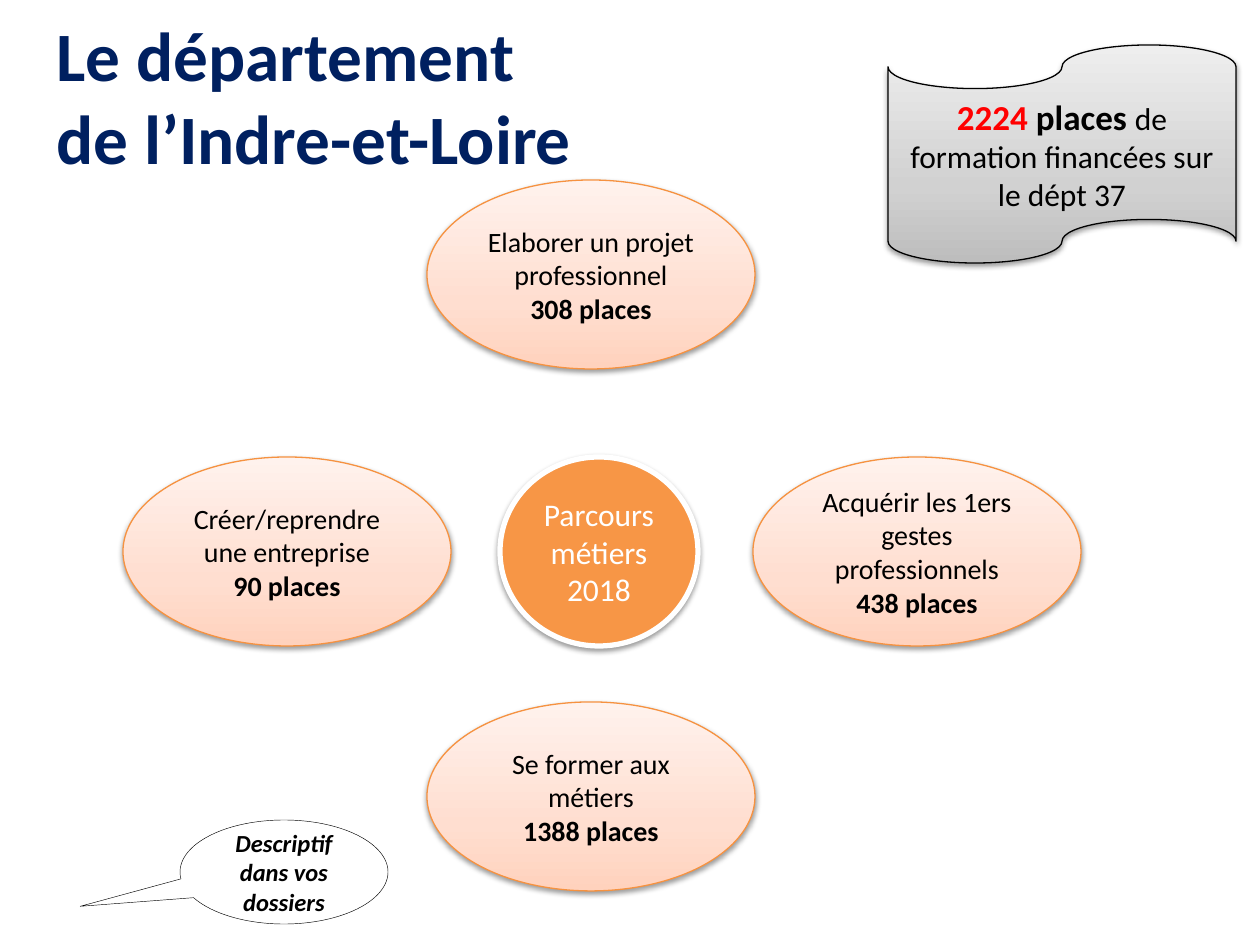
"""Build the slide on training places in the Indre-et-Loire department."""
from pptx import Presentation
from pptx.dml.color import RGBColor
from pptx.enum.shapes import MSO_SHAPE
from pptx.enum.text import MSO_ANCHOR, PP_ALIGN
from pptx.oxml import parse_xml
from pptx.oxml.ns import nsdecls
from pptx.util import Pt

OVAL = MSO_SHAPE.OVAL
TAPE = MSO_SHAPE.FLOWCHART_PUNCHED_TAPE
CALLOUT = MSO_SHAPE.OVAL_CALLOUT
MIDDLE = MSO_ANCHOR.MIDDLE
LEFT, CENTER = PP_ALIGN.LEFT, PP_ALIGN.CENTER

NAVY = RGBColor(0x00, 0x20, 0x60)
ORANGE = RGBColor(0xF7, 0x96, 0x46)
ORANGE_EDGE = RGBColor(0xF6, 0x92, 0x40)
RED = RGBColor(0xFF, 0x00, 0x00)
BLACK = RGBColor(0x00, 0x00, 0x00)
WHITE = RGBColor(0xFF, 0xFF, 0xFF)
PEACH_STOPS = [
    (0, RGBColor(0xFF, 0xD2, 0xBD)),
    (35, RGBColor(0xFF, 0xDE, 0xD0)),
    (100, RGBColor(0xFF, 0xF2, 0xED)),
]
GREY_STOPS = [
    (0, RGBColor(0xBD, 0xBD, 0xBD)),
    (35, RGBColor(0xD1, 0xD1, 0xD1)),
    (100, RGBColor(0xEE, 0xEE, 0xEE)),
]

FONT = "Calibri"
EMU_PER_PX = 914400 / 126
SIDE_INSET = 11

TITLE = "Le département \vde l’Indre-et-Loire"
HUB = "Parcours métiers 2018"
STEP_SIZE = (328, 189)
STEPS = [
    ("Elaborer un projet professionnel", "308 places", (427, 180)),
    ("Créer/reprendre une entreprise", "90 places", (123, 457)),
    ("Se former aux métiers", "1388 places", (427, 702)),
    ("Acquérir les 1ers gestes professionnels", "438 places", (753, 457)),
]
TOTAL = [
    ("2224 ", 20, RED, True),
    ("places ", 20, BLACK, True),
    ("de formation financées sur le dépt 37", 18, BLACK, False),
]
NOTE = "Descriptif dans vos dossiers"


def px(length):
    return round(length * EMU_PER_PX)


def format_run(run, size, color, bold=False, italic=False):
    run.font.name = FONT
    run.font.size = Pt(size)
    run.font.color.rgb = color
    run.font.bold = bold
    run.font.italic = italic


def add_box(slide, kind, box, fill, edge, edge_width):
    shape = slide.shapes.add_shape(kind, *map(px, box))
    shape.shadow.inherit = False
    if isinstance(fill, RGBColor):
        shape.fill.solid()
        shape.fill.fore_color.rgb = fill
    else:
        fill_gradient(shape, fill)
    shape.line.color.rgb = edge
    shape.line.width = Pt(edge_width)
    text_frame = shape.text_frame
    text_frame.word_wrap = True
    text_frame.vertical_anchor = MIDDLE
    text_frame.margin_left = text_frame.margin_right = px(SIDE_INSET)
    return shape


def fill_gradient(shape, stops):
    shape.fill.gradient()
    shape.fill.gradient_angle = 90
    stop_list = shape.fill._fill._gradFill.gsLst
    for stop in list(stop_list):
        stop_list.remove(stop)
    for position, color in stops:
        stop_list.append(parse_xml(
            f'<a:gs {nsdecls("a")} pos="{position * 1000}">'
            f'<a:srgbClr val="{color}"/></a:gs>'))


def add_shadow(shape):
    effects = shape._element.spPr.find(
        "{http://schemas.openxmlformats.org/drawingml/2006/main}effectLst")
    effects.append(parse_xml(
        f'<a:outerShdw {nsdecls("a")} blurRad="{Pt(3.1)}" dist="{Pt(1.6)}" '
        'dir="5400000" rotWithShape="0"><a:srgbClr val="000000">'
        '<a:alpha val="38000"/></a:srgbClr></a:outerShdw>'))


def write_paragraphs(shape, paragraphs):
    text_frame = shape.text_frame
    for index, runs in enumerate(paragraphs):
        paragraph = text_frame.add_paragraph() if index else text_frame.paragraphs[0]
        paragraph.alignment = CENTER
        for text, *style in runs:
            run = paragraph.add_run()
            run.text = text
            format_run(run, *style)


def add_title(slide):
    title = slide.shapes.title
    title.left, title.top, title.width, title.height = map(px, (44, 16, 1134, 158))
    title.text_frame.text = TITLE
    title.text_frame.vertical_anchor = MIDDLE
    paragraph = title.text_frame.paragraphs[0]
    paragraph.alignment = LEFT
    for run in paragraph.runs:
        format_run(run, 39.6, NAVY, bold=True)


def main():
    presentation = Presentation()
    presentation.slide_width, presentation.slide_height = px(1260), px(945)
    slide = presentation.slides.add_slide(presentation.slide_layouts[5])
    add_title(slide)

    hub = add_box(slide, OVAL, (500, 457, 198, 189), ORANGE, WHITE, 3)
    add_shadow(hub)
    write_paragraphs(hub, [[(HUB, 18, WHITE)]])

    for label, places, position in STEPS:
        step = add_box(slide, OVAL, position + STEP_SIZE, PEACH_STOPS, ORANGE_EDGE, 0.75)
        add_shadow(step)
        write_paragraphs(step, [[(label, 16, BLACK)], [(places, 16, BLACK, True)]])

    total = add_box(slide, TAPE, (888, 45, 348, 218), GREY_STOPS, BLACK, 0.75)
    add_shadow(total)
    write_paragraphs(total, [TOTAL])

    note = add_box(slide, CALLOUT, (180, 820, 208, 104), WHITE, BLACK, 0.25)
    note.adjustments[0], note.adjustments[1] = -0.98, 0.33
    write_paragraphs(note, [[(NOTE, 14, BLACK, True, True)]])

    presentation.save("out.pptx")


if __name__ == "__main__":
    main()
